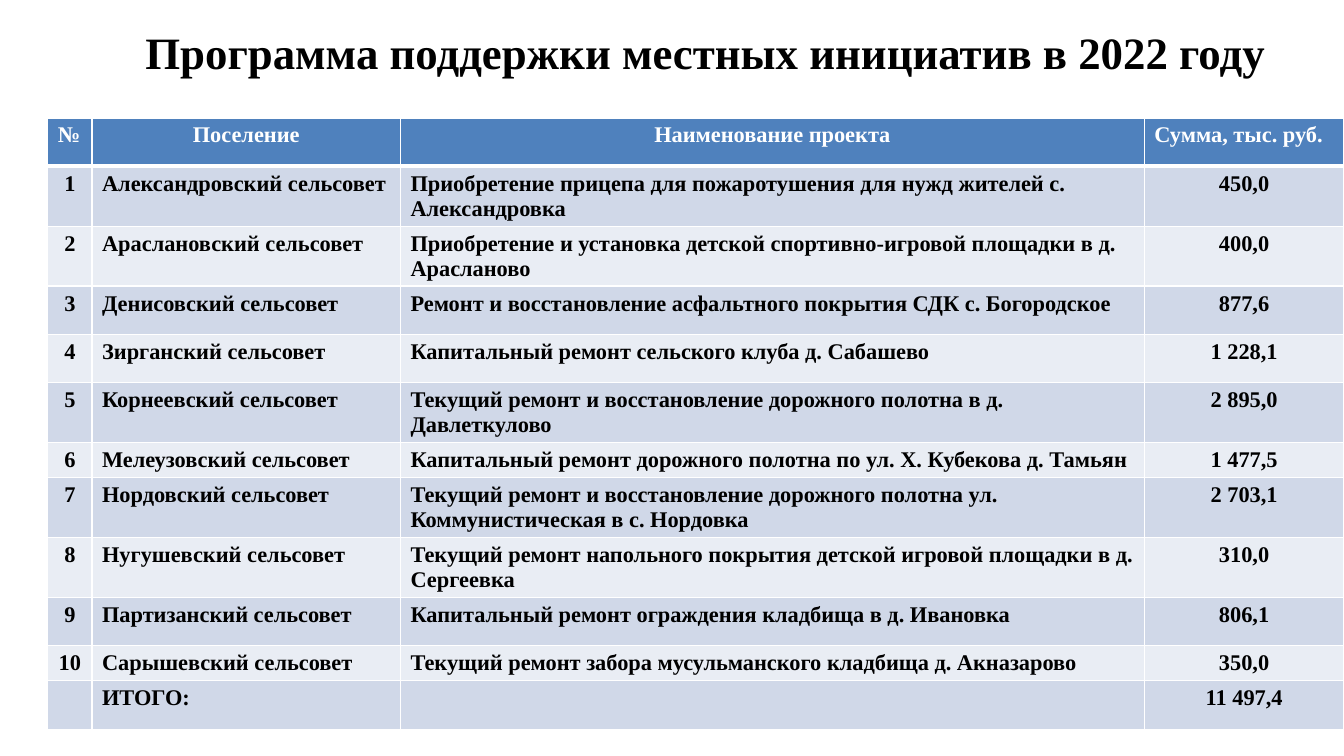
from lxml import etree
from pptx import Presentation, util as u
from pptx.dml.color import RGBColor
from pptx.enum import text
from pptx.oxml.ns import qn

COLORS = {"text": "000000", "white": "FFFFFF", "header": "4F81BD",
          "odd": "D0D8E8", "even": "E9EDF4"}
FONT = "Times New Roman"
LEFT, CENTER = text.PP_ALIGN.LEFT, text.PP_ALIGN.CENTER

HEADER = ("№", "Поселение", "Наименование проекта", "Сумма, тыс. руб.")
PROJECTS = [
    ("Александровский", "Приобретение прицепа для пожаротушения для нужд жителей с. Александровка", "450,0"),
    ("Араслановский", "Приобретение и установка детской спортивно-игровой площадки в д. Арасланово", "400,0"),
    ("Денисовский", "Ремонт и восстановление асфальтного покрытия СДК с. Богородское", "877,6"),
    ("Зирганский", "Капитальный ремонт сельского клуба д. Сабашево", "1 228,1"),
    ("Корнеевский", "Текущий ремонт и восстановление дорожного полотна в д. Давлеткулово", "2 895,0"),
    ("Мелеузовский", "Капитальный ремонт дорожного полотна по ул. Х. Кубекова д. Тамьян", "1 477,5"),
    ("Нордовский", "Текущий ремонт и восстановление дорожного полотна ул. Коммунистическая в с. Нордовка", "2 703,1"),
    ("Нугушевский", "Текущий ремонт напольного покрытия детской игровой площадки в д. Сергеевка", "310,0"),
    ("Партизанский", "Капитальный ремонт ограждения кладбища в д. Ивановка", "806,1"),
    ("Сарышевский", "Текущий ремонт забора мусульманского кладбища д. Акназарово", "350,0"),
]
TOTAL = ("", "ИТОГО:", "", "11 497,4")

# Sizes on a grid of 100 columns by 100 rows
COLUMN_WIDTHS = (3.3, 22.95, 55.35, 14.85)
ROW_HEIGHT = 6.4
LOW_ROWS = {5: 2, 6: 3.3, 10: 4}


class SlideBuilder:
    def __init__(self, presentation):
        self.column = presentation.slide_width / 100
        self.row = presentation.slide_height / 100
        self.slide = presentation.slides.add_slide(presentation.slide_layouts[5])

    def x(self, columns):
        return u.Emu(round(columns * self.column))

    def y(self, rows):
        return u.Emu(round(rows * self.row))

    def set_words(self, frame, words, size, color, align):
        frame.text = words
        paragraph = frame.paragraphs[0]
        paragraph.alignment = align
        for run in paragraph.runs:
            run.font.name = FONT
            run.font.size = u.Pt(size)
            run.font.bold = True
            run.font.color.rgb = RGBColor.from_string(COLORS[color])

    def title(self, words, left, top, width, height):
        shape = self.slide.shapes.title
        shape.left, shape.top = self.x(left), self.y(top)
        shape.width, shape.height = self.x(width), self.y(height)
        frame = shape.text_frame
        frame.word_wrap = True
        frame.vertical_anchor = text.MSO_ANCHOR.MIDDLE
        self.set_words(frame, words, 32, "text", CENTER)

    def borders(self, cell, top, bottom):
        properties = cell._tc.get_or_add_tcPr()
        widths = {"a:lnL": 1, "a:lnR": 1, "a:lnT": top, "a:lnB": bottom}
        for index, (tag, width) in enumerate(widths.items()):
            line = etree.Element(qn(tag), w=str(u.Pt(width)))
            fill = etree.SubElement(line, qn("a:solidFill"))
            etree.SubElement(fill, qn("a:srgbClr"), val=COLORS["white"])
            properties.insert(index, line)

    def table(self, rows, left, top):
        heights = [LOW_ROWS.get(index, ROW_HEIGHT) for index in range(len(rows))]
        table = self.slide.shapes.add_table(
            len(rows), len(COLUMN_WIDTHS), self.x(left), self.y(top),
            self.x(sum(COLUMN_WIDTHS)), self.y(sum(heights))).table
        for column, width in zip(table.columns, COLUMN_WIDTHS):
            column.width = self.x(width)
        for r, values in enumerate(rows):
            table.rows[r].height = self.y(heights[r])
            fill = "header" if r == 0 else "odd" if r % 2 else "even"
            centered = (1, 2) if r == 0 else (0, 3)
            for c, words in enumerate(values):
                cell = table.cell(r, c)
                cell.fill.solid()
                cell.fill.fore_color.rgb = RGBColor.from_string(COLORS[fill])
                self.borders(cell, 3 if r == 1 else 1, 3 if r == 0 else 1)
                self.set_words(cell.text_frame, words, 16, "text" if r else "white",
                               CENTER if c in centered else LEFT)


def main():
    presentation = Presentation()
    presentation.slide_width, presentation.slide_height = u.Inches(13.33), u.Inches(7.5)
    builder = SlideBuilder(presentation)

    # Heading
    builder.title("Программа поддержки местных инициатив в 2022 году", 5, 0, 95, 13.6)

    # Projects by settlement
    projects = [(str(number), f"{settlement} сельсовет", project, amount)
                for number, (settlement, project, amount) in enumerate(PROJECTS, 1)]
    builder.table([HEADER, *projects, TOTAL], 3.55, 15.6)

    presentation.save("out.pptx")


if __name__ == "__main__":
    main()
